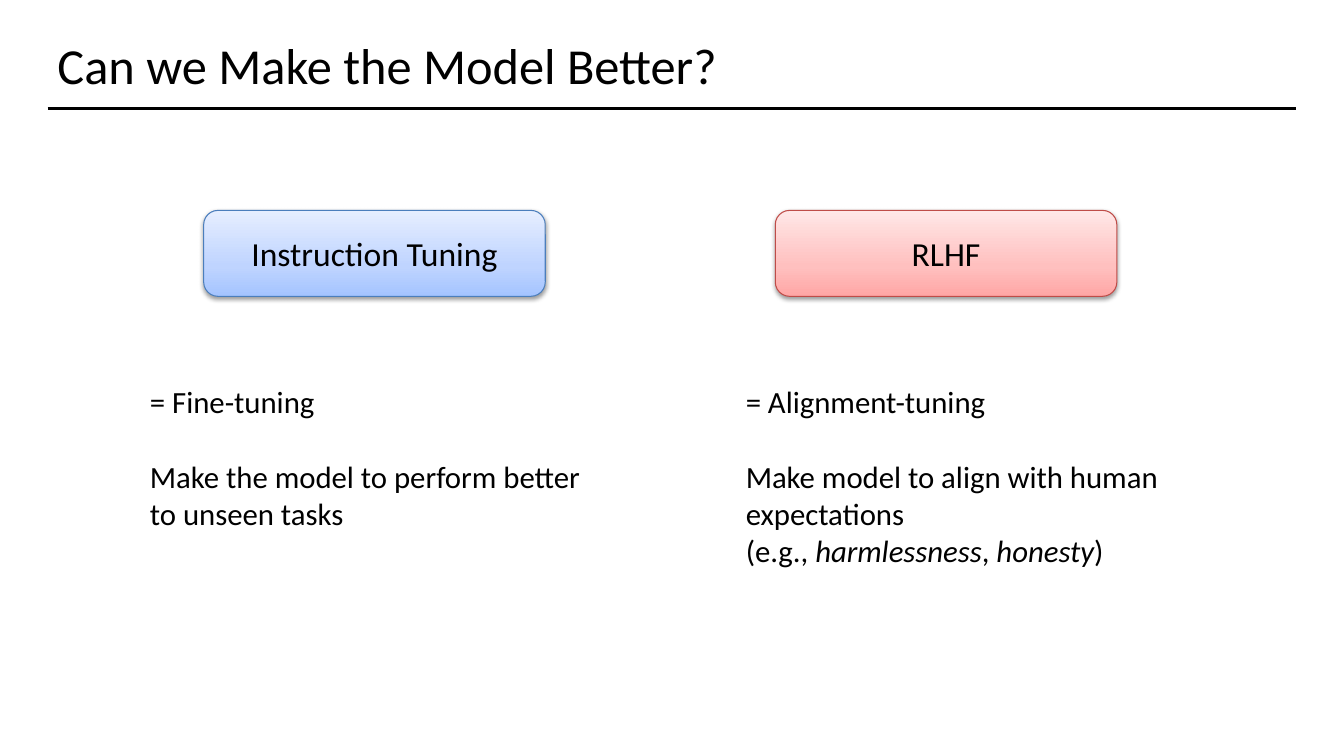
from copy import deepcopy

from lxml import etree
from pptx import Presentation
from pptx.dml.color import RGBColor
from pptx.enum.shapes import MSO_CONNECTOR, MSO_SHAPE
from pptx.enum.text import MSO_ANCHOR, PP_ALIGN
from pptx.oxml import parse_xml
from pptx.oxml.ns import nsdecls, qn
from pptx.util import Pt

STRAIGHT = MSO_CONNECTOR.STRAIGHT
ROUNDED = MSO_SHAPE.ROUNDED_RECTANGLE
MIDDLE, BOTTOM = MSO_ANCHOR.MIDDLE, MSO_ANCHOR.BOTTOM
CENTER = PP_ALIGN.CENTER

SHADOW = (
    f'<a:outerShdw {nsdecls("a")} blurRad="40000" dist="20000" dir="5400000" '
    'rotWithShape="0"><a:srgbClr val="000000"><a:alpha val="38000"/>'
    '</a:srgbClr></a:outerShdw>'
)


def rgb(value):
    return RGBColor.from_string(value)


def style(p, size):
    for r in p.runs:
        r.font.name = "Calibri"
        r.font.size = Pt(size)
        r.font.color.rgb = rgb("000000")


prs = Presentation()
prs.slide_width, prs.slide_height = Pt(960), Pt(540)
s = prs.slides.add_slide(prs.slide_layouts[6])

# Title and rule
rule = s.shapes.add_connector(STRAIGHT, Pt(34), Pt(77.8), Pt(926), Pt(77.8))
rule.line.color.rgb = rgb("000000")
rule.line.width = Pt(2)
etree.SubElement(rule._element.spPr, qn("a:effectLst"))

title = s.shapes.add_textbox(Pt(34), Pt(10), Pt(892), Pt(61.2))
tf = title.text_frame
tf.word_wrap = True
tf.vertical_anchor = BOTTOM
tf.text = "Can we Make the Model Better?"
style(tf.paragraphs[0], 36)

# Each method: button left, label, outline, gradient, text left, heading,
# and description lines as lists of (text, italic) runs
methods = [
    (145.5, "Instruction Tuning", "4B7EBC", ("A4C4FF", "BFD4FF", "E6EEFF"),
     100, "= Fine-tuning",
     [[("Make the model to perform better to unseen tasks", False)]]),
    (553.8, "RLHF", "BF4C48", ("FFA6A5", "FFC0BF", "FFE7E7"),
     525.6, "= Alignment-tuning",
     [[("Make model to align with human expectations", False)],
      [("(e.g., ", False), ("harmlessness", True), (", ", False),
       ("honesty", True), (")", False)]]),
]

for left, label, outline, colors, text_left, heading, lines in methods:
    sp = s.shapes.add_shape(ROUNDED, Pt(left), Pt(150.3), Pt(244), Pt(61.4))
    sp.fill.gradient()
    sp.fill.gradient_angle = 90
    stop_list = sp._element.spPr.find(".//" + qn("a:gsLst"))
    stop_list.append(deepcopy(stop_list[-1]))
    for stop, position, color in zip(sp.fill.gradient_stops, (0, 0.35, 1), colors):
        stop.position = position
        stop.color.rgb = rgb(color)
    sp.line.color.rgb = rgb(outline)
    sp.line.width = Pt(0.75)
    sp.shadow.inherit = False
    sp._element.spPr.find(qn("a:effectLst")).append(parse_xml(SHADOW))
    tf = sp.text_frame
    tf.vertical_anchor = MIDDLE
    tf.text = label
    tf.paragraphs[0].alignment = CENTER
    style(tf.paragraphs[0], 24)

    box = s.shapes.add_textbox(Pt(text_left), Pt(270), Pt(334.8), Pt(140))
    tf = box.text_frame
    tf.word_wrap = True
    tf.text = heading
    style(tf.paragraphs[0], 22)
    p = tf.add_paragraph()
    p.space_before = Pt(26.8)
    for i, line in enumerate(lines):
        if i:
            p.add_line_break()
        for text, italic in line:
            r = p.add_run()
            r.text = text
            r.font.italic = italic
    style(p, 22)

prs.save("out.pptx")
